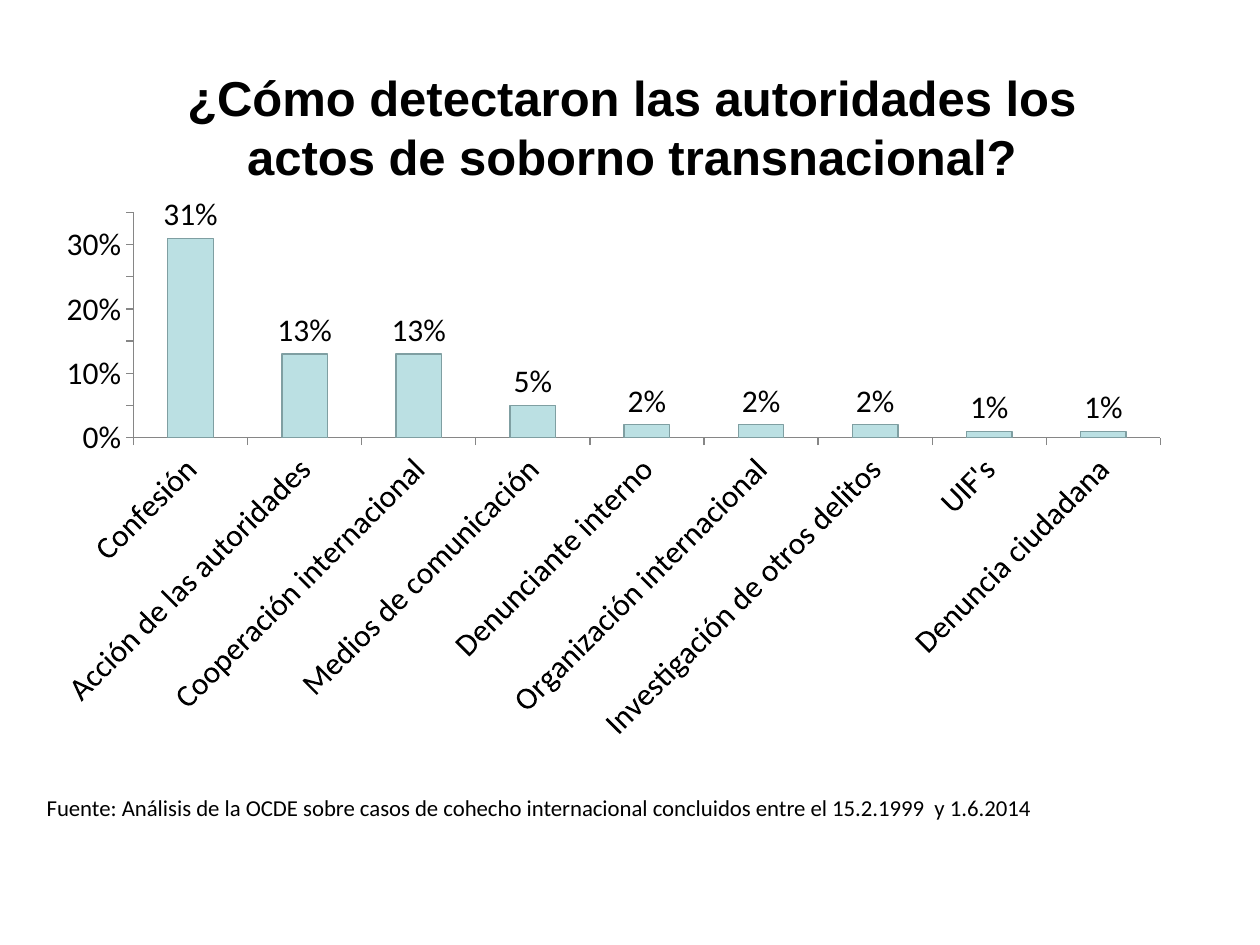
from lxml import etree
from pptx import Presentation
from pptx.chart.data import CategoryChartData
from pptx.dml.color import RGBColor
from pptx.enum.chart import XL_CHART_TYPE, XL_LABEL_POSITION, XL_TICK_MARK
from pptx.enum.text import MSO_ANCHOR, PP_ALIGN
from pptx.oxml.ns import qn
from pptx.util import Inches, Pt

BLACK = RGBColor(0x00, 0x00, 0x00)
BAR_FILL = RGBColor(0xBB, 0xE0, 0xE3)
BAR_LINE = RGBColor(0x7F, 0x9F, 0xA2)
AXIS_GREY = RGBColor(0x86, 0x86, 0x86)

DETECTION = {
    "Confesión": 0.31,
    "Acción de las autoridades": 0.13,
    "Cooperación internacional": 0.13,
    "Medios de comunicación": 0.05,
    "Denunciante interno": 0.02,
    "Organización internacional": 0.02,
    "Investigación de otros delitos": 0.02,
    "UIF's": 0.01,
    "Denuncia ciudadana": 0.01,
}


def set_font(font, **values):
    for name, value in values.items():
        setattr(font, name, value)
    font.color.rgb = BLACK


def add_text(page, box, text, anchor, align, **font_values):
    """Place one wrapped paragraph in the box."""
    frame = page.shapes.add_textbox(*map(Inches, box)).text_frame
    frame_format = {
        "word_wrap": True,
        "vertical_anchor": anchor,
        "margin_left": Inches(0.08),
        "margin_right": Inches(0.08),
        "margin_top": Inches(0.04),
        "margin_bottom": Inches(0.04),
    }
    for name, value in frame_format.items():
        setattr(frame, name, value)
    para = frame.paragraphs[0]
    para.alignment = align
    span = para.add_run()
    span.text = text
    set_font(span.font, **font_values)


def set_plot_area(chart, **fractions):
    """Fix the inner plot area as fractions of the chart."""
    plot_area = chart._chartSpace.chart.plotArea
    for old in plot_area.findall(qn("c:layout")):
        plot_area.remove(old)
    layout = etree.Element(qn("c:layout"))
    manual = etree.SubElement(layout, qn("c:manualLayout"))
    settings = {"layoutTarget": "inner", "xMode": "edge", "yMode": "edge", **fractions}
    for name, value in settings.items():
        etree.SubElement(manual, qn(f"c:{name}")).set("val", str(value))
    plot_area.insert(0, layout)


def add_detection_chart(page, box):
    data = CategoryChartData(number_format="0%")
    data.categories = list(DETECTION)
    data.add_series("Series 1", list(DETECTION.values()))
    chart = page.shapes.add_chart(
        XL_CHART_TYPE.COLUMN_CLUSTERED, *map(Inches, box), data
    ).chart
    chart.has_legend = False
    chart.has_title = False
    set_font(chart.font, name="Calibri", size=Pt(18))
    width, height = box[2:]
    set_plot_area(
        chart, x=0.77 / width, y=0.13 / height, w=8.15 / width, h=1.79 / height
    )

    # Axes
    for axis in (chart.category_axis, chart.value_axis):
        axis.has_major_gridlines = False
        axis.major_tick_mark = XL_TICK_MARK.OUTSIDE
        axis.format.line.color.rgb = AXIS_GREY
        axis.format.line.width = Pt(0.75)
    set_font(chart.category_axis.tick_labels.font, name="Calibri", size=Pt(18))
    category_text = chart.category_axis._element.find(qn("c:txPr"))
    category_text.find(qn("a:bodyPr")).set("rot", "-2700000")
    scale = {"minimum_scale": 0, "maximum_scale": 0.35, "major_unit": 0.05}
    for name, value in scale.items():
        setattr(chart.value_axis, name, value)
    number_labels = chart.value_axis.tick_labels
    number_labels.number_format = "0%"
    number_labels.number_format_is_linked = False

    # Bars
    plot = chart.plots[0]
    plot.gap_width = 150
    plot.vary_by_categories = False
    series = plot.series[0]
    series.format.fill.solid()
    series.format.fill.fore_color.rgb = BAR_FILL
    series.format.line.color.rgb = BAR_LINE
    series.format.line.width = Pt(0.75)

    # Bar labels, written as text on each point
    label_format = {
        "show_value": True,
        "show_category_name": True,
        "number_format": "0%",
        "number_format_is_linked": False,
        "position": XL_LABEL_POSITION.OUTSIDE_END,
    }
    for name, value in label_format.items():
        setattr(series.data_labels, name, value)
    set_font(series.data_labels.font, name="Calibri", size=Pt(18))
    for index, share in enumerate(DETECTION.values()):
        label = series.points[index].data_label
        span = label.text_frame.paragraphs[0].add_run()
        span.text = f"{share:.0%}"
        set_font(span.font, name="Calibri", size=Pt(18))
        label.position = XL_LABEL_POSITION.OUTSIDE_END


def main():
    deck = Presentation()
    deck.slide_width, deck.slide_height = Inches(10), Inches(7.5)
    page = deck.slides.add_slide(deck.slide_layouts[6])

    # Title
    add_text(
        page, (0.88, 0.47, 8.27, 1.07),
        "¿Cómo detectaron las autoridades los actos de soborno transnacional?",
        MSO_ANCHOR.MIDDLE, PP_ALIGN.CENTER,
        name="Arial", size=Pt(28), bold=True,
    )
    # Chart
    add_detection_chart(page, (0.29, 1.55, 9.11, 4.4))
    # Source note
    add_text(
        page, (0.29, 6.26, 8.48, 0.52),
        "Fuente: Análisis de la OCDE sobre casos de cohecho internacional "
        "concluidos entre el 15.2.1999  y 1.6.2014",
        MSO_ANCHOR.TOP, PP_ALIGN.LEFT,
        name="Calibri", size=Pt(13),
    )
    deck.save("out.pptx")


if __name__ == "__main__":
    main()
